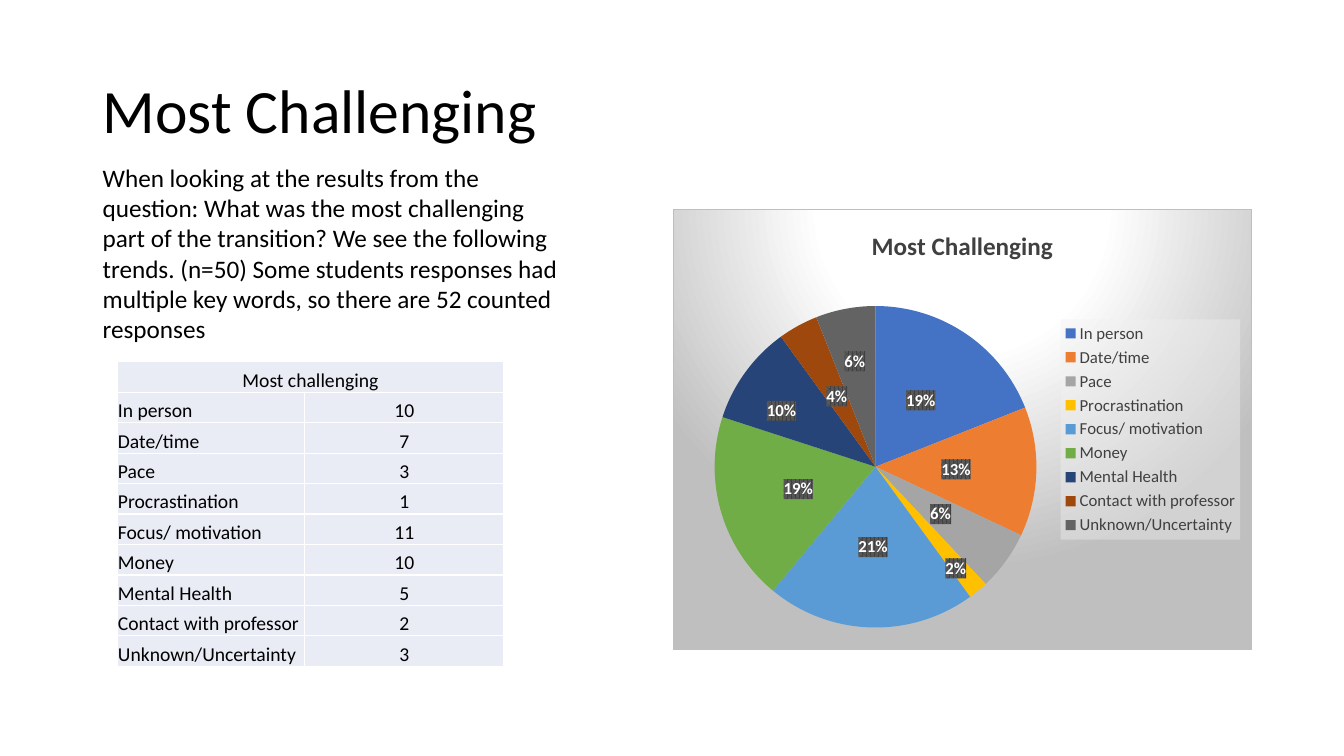
from copy import deepcopy
from lxml import etree
from pptx import Presentation
from pptx.chart.data import CategoryChartData
from pptx.dml.color import RGBColor
from pptx.enum import chart as ce, text as te
from pptx.oxml import parse_xml
from pptx.oxml.ns import nsdecls, qn
from pptx.util import Inches, Pt

FONT = "Calibri"
BLACK = RGBColor(0x00, 0x00, 0x00)
WHITE = RGBColor(0xFF, 0xFF, 0xFF)
DARK = RGBColor(0x40, 0x40, 0x40)
GREY = RGBColor(0xBF, 0xBF, 0xBF)
SLATE = RGBColor(0x59, 0x59, 0x59)
PALE = RGBColor(0xF2, 0xF2, 0xF2)
CELL = RGBColor(0xE9, 0xEB, 0xF5)
SLICES = [RGBColor.from_string(c) for c in (
    "4472C4", "ED7D31", "A5A5A5", "FFC000", "5B9BD5",
    "70AD47", "264478", "9E480E", "636363")]

# Answer, count, percent
ROWS = [
    ("In person", 10, 19), ("Date/time", 7, 13), ("Pace", 3, 6),
    ("Procrastination", 1, 2), ("Focus/ motivation", 11, 21),
    ("Money", 10, 19), ("Mental Health", 5, 10),
    ("Contact with professor", 2, 4), ("Unknown/Uncertainty", 3, 6)]
# Slice number: shift of its label, as a share of the chart
SHIFTS = {3: (0.05, 0.09), 6: (-0.05, -0.02), 8: (-0.01, -0.06)}
NOTE = ("When looking at the results from the question: What was the most "
        "challenging part of the transition? We see the following trends. "
        "(n=50) Some students responses had multiple key words, so there "
        "are 52 counted responses")


def style(font, size, color, bold=False):
    font.name, font.size, font.bold = FONT, Pt(size), bold
    font.color.rgb = color


def add_run(para, words, size, color=BLACK, bold=False):
    run = para.add_run()
    run.text = words
    style(run.font, size, color, bold)


def xml(body):
    """Parse chart XML whose root tag has a @ where namespaces go."""
    return parse_xml(body.replace("@", nsdecls("c", "a"), 1))


def layout(x, y, w=None, h=None):
    """Manual layout: a shift for a label, or a full inner box."""
    modes = size = ""
    if w:
        modes = '<c:xMode val="edge"/><c:yMode val="edge"/>'
        size = f'<c:w val="{w}"/><c:h val="{h}"/>'
    return xml(f'<c:layout @><c:manualLayout>{modes}<c:x val="{x}"/>'
               f'<c:y val="{y}"/>{size}</c:manualLayout></c:layout>')


def add_title(slide, x, y, w, h):
    title = slide.shapes.title
    title.left, title.top, title.width, title.height = map(Inches, (x, y, w, h))
    frame = title.text_frame
    frame.auto_size = te.MSO_AUTO_SIZE.NONE
    frame.vertical_anchor = te.MSO_ANCHOR.MIDDLE
    para = frame.paragraphs[0]
    para.alignment, para.line_spacing = te.PP_ALIGN.LEFT, 0.9
    add_run(para, "Most Challenging", 44)


def add_note(slide, x, y, w, h):
    box = slide.shapes.add_textbox(*map(Inches, (x, y, w, h)))
    box.text_frame.word_wrap = True
    box.text_frame.auto_size = te.MSO_AUTO_SIZE.SHAPE_TO_FIT_TEXT
    add_run(box.text_frame.paragraphs[0], NOTE, 18)


def fill_cell(cell, words, align):
    cell.margin_left = cell.margin_right = cell.margin_top = Inches(0.01)
    cell.margin_bottom = 0
    cell.vertical_anchor = te.MSO_ANCHOR.BOTTOM
    para = cell.text_frame.paragraphs[0]
    para.alignment = align
    add_run(para, words, 14)


def edge_cell(cell):
    props = cell._tc.get_or_add_tcPr()
    for side in ("lnL", "lnR", "lnT", "lnB"):
        line = etree.SubElement(props, qn("a:" + side), w=str(Pt(1)))
        solid = etree.SubElement(line, qn("a:solidFill"))
        etree.SubElement(solid, qn("a:srgbClr"), val=str(WHITE))
    cell.fill.solid()
    cell.fill.fore_color.rgb = CELL


def add_counts(slide, x, y, w, h):
    count = len(ROWS) + 1
    table = slide.shapes.add_table(count, 2, *map(Inches, (x, y, w, h))).table
    table.first_row = table.horz_banding = False
    table.columns[0].width = Inches(1.86)
    table.columns[1].width = Inches(w - 1.86)
    for row in table.rows:
        row.height = Inches(h / count)
        for cell in row.cells:
            edge_cell(cell)
    # Heading across both columns, then one row per answer
    table.cell(0, 0).merge(table.cell(0, 1))
    fill_cell(table.cell(0, 0), "Most challenging", te.PP_ALIGN.CENTER)
    for i, (name, total, _) in enumerate(ROWS, 1):
        fill_cell(table.cell(i, 0), name, te.PP_ALIGN.LEFT)
        fill_cell(table.cell(i, 1), str(total), te.PP_ALIGN.CENTER)


def add_labels(plot):
    plot.has_data_labels = True
    labels = plot.data_labels
    labels.show_percentage, labels.show_value = True, False
    labels.number_format, labels.number_format_is_linked = "0%", False
    labels.position = ce.XL_LABEL_POSITION.CENTER
    style(labels.font, 12, WHITE, True)
    # Patterned plate behind each label
    root = labels._element
    plate = xml(
        '<c:spPr @><a:pattFill prst="pct75">'
        f'<a:fgClr><a:srgbClr val="{DARK}"/></a:fgClr>'
        f'<a:bgClr><a:srgbClr val="{SLATE}"/></a:bgClr>'
        '</a:pattFill><a:ln><a:noFill/></a:ln></c:spPr>')
    root.find(qn("c:txPr")).addprevious(plate)
    # Labels moved off their slice centres
    parts = [deepcopy(part) for part in root
             if part.tag != qn("c:showLeaderLines")]
    for place, (i, shift) in enumerate(SHIFTS.items()):
        label = xml(f'<c:dLbl @><c:idx val="{i}"/></c:dLbl>')
        label.append(layout(*shift))
        label.extend(deepcopy(parts))
        root.insert(place, label)


def add_legend(chart):
    chart.has_legend = True
    legend = chart.legend
    legend.position = ce.XL_LEGEND_POSITION.RIGHT
    legend.include_in_layout = False
    style(legend.font, 12, DARK)
    over = legend._element.find(qn("c:overlay"))
    for old in legend._element.findall(qn("c:layout")):
        legend._element.remove(old)
    over.addprevious(layout(0.67, 0.25, 0.31, 0.5))
    over.addnext(xml(
        f'<c:spPr @><a:solidFill><a:srgbClr val="{PALE}">'
        '<a:alpha val="39000"/></a:srgbClr></a:solidFill></c:spPr>'))


def add_back(chart):
    stops = "".join(
        f'<a:gs pos="{pos}000"><a:srgbClr val="{color}"/></a:gs>'
        for pos, color in ((0, WHITE), (39, WHITE), (100, GREY)))
    body = chart._chartSpace.find(qn("c:chart"))
    body.addprevious(xml('<c:roundedCorners @ val="0"/>'))
    body.addnext(xml(
        f'<c:spPr @><a:gradFill><a:gsLst>{stops}</a:gsLst>'
        '<a:path path="circle"><a:fillToRect l="50000" t="-80000" '
        'r="50000" b="180000"/></a:path></a:gradFill>'
        f'<a:ln w="{Pt(0.75)}"><a:solidFill><a:srgbClr val="{GREY}"/>'
        '</a:solidFill></a:ln></c:spPr>'))


def add_pie(slide, x, y, w, h):
    data = CategoryChartData()
    data.categories = [row[0] for row in ROWS]
    data.add_series("Series 1", [row[2] for row in ROWS])
    chart = slide.shapes.add_chart(
        ce.XL_CHART_TYPE.PIE, *map(Inches, (x, y, w, h)), data).chart
    style(chart.font, 10, BLACK)
    chart.has_title = True
    add_run(chart.chart_title.text_frame.paragraphs[0],
            "Most Challenging", 18, DARK, True)
    chart.chart_title.include_in_layout = False
    plot = chart.plots[0]
    plot.vary_by_categories = True
    for i, color in enumerate(SLICES):
        fill = plot.series[0].points[i].format.fill
        fill.solid()
        fill.fore_color.rgb = color
    add_labels(plot)
    add_legend(chart)
    add_back(chart)
    # Room for the pie itself
    area = chart._chartSpace.find(".//" + qn("c:plotArea"))
    for old in area.findall(qn("c:layout")):
        area.remove(old)
    area.insert(0, layout(0.07, 0.22, 0.56, 0.73))


def main():
    deck = Presentation()
    deck.slide_width, deck.slide_height = Inches(13.33), Inches(7.5)
    slide = deck.slides.add_slide(deck.slide_layouts[5])
    add_title(slide, 0.92, 0.4, 11.5, 1.45)
    add_pie(slide, 6.67, 2.07, 5.75, 4.38)
    add_note(slide, 0.92, 1.56, 4.74, 1.92)
    add_counts(slide, 1.16, 3.59, 3.84, 3.02)
    deck.save("out.pptx")


if __name__ == "__main__":
    main()
